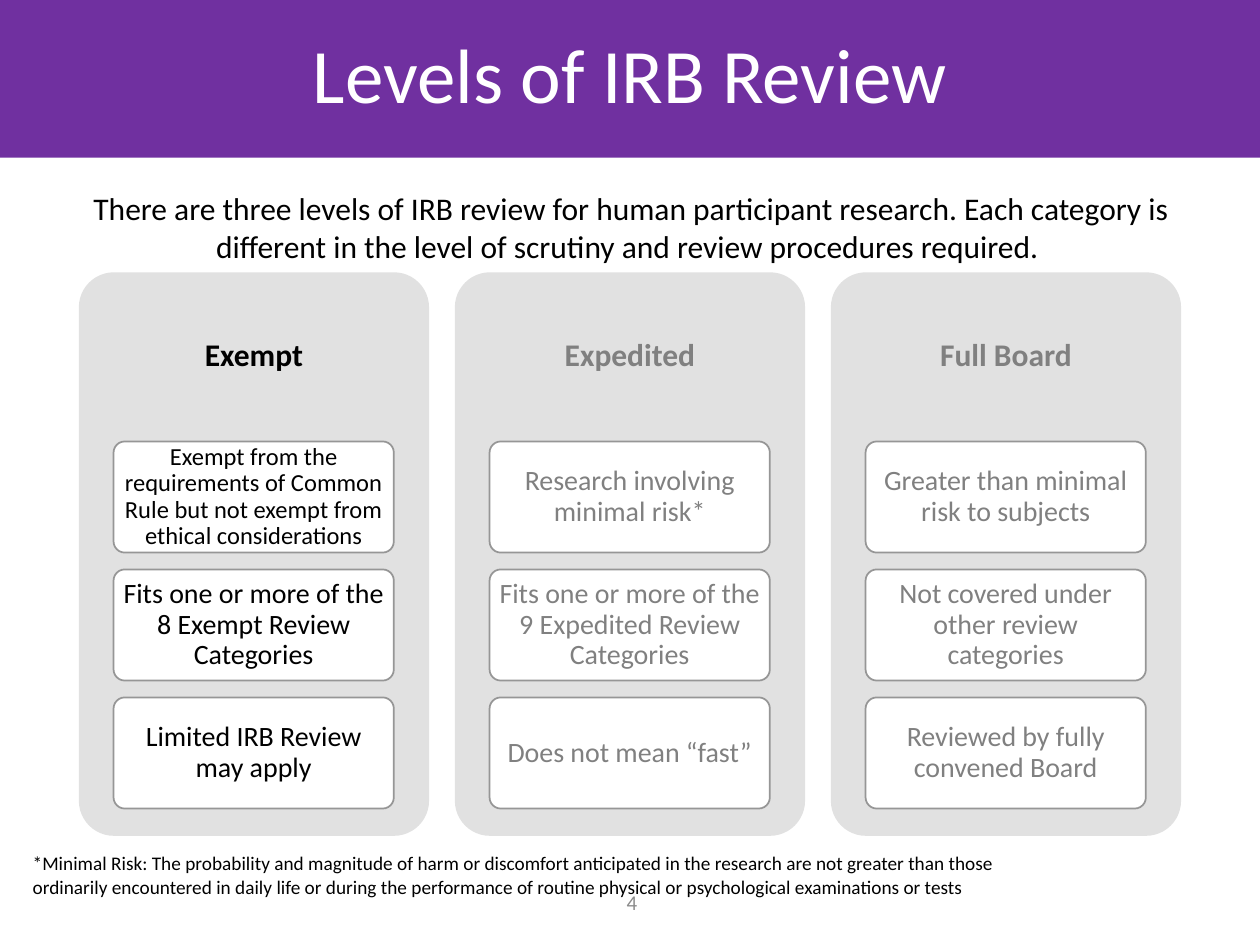
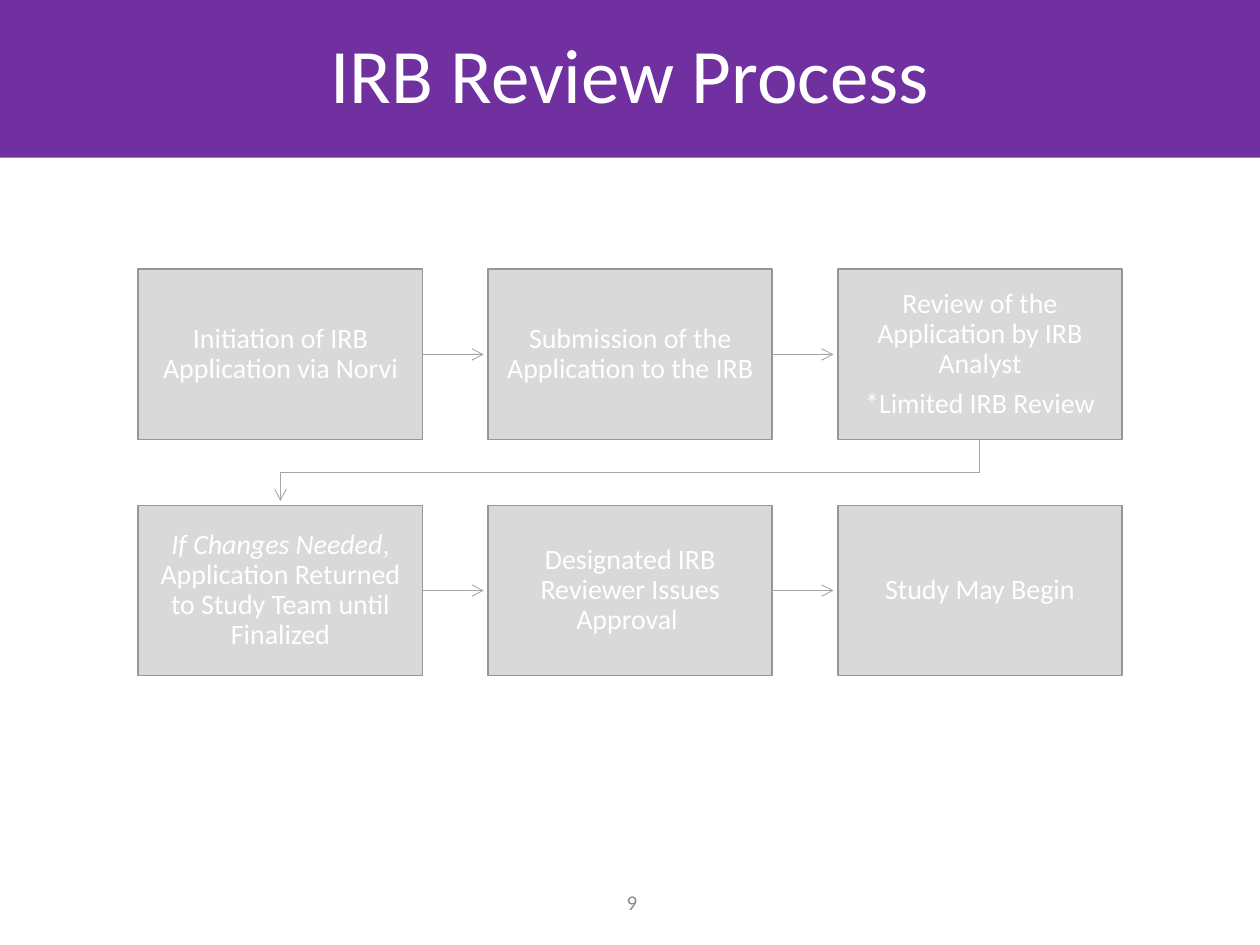
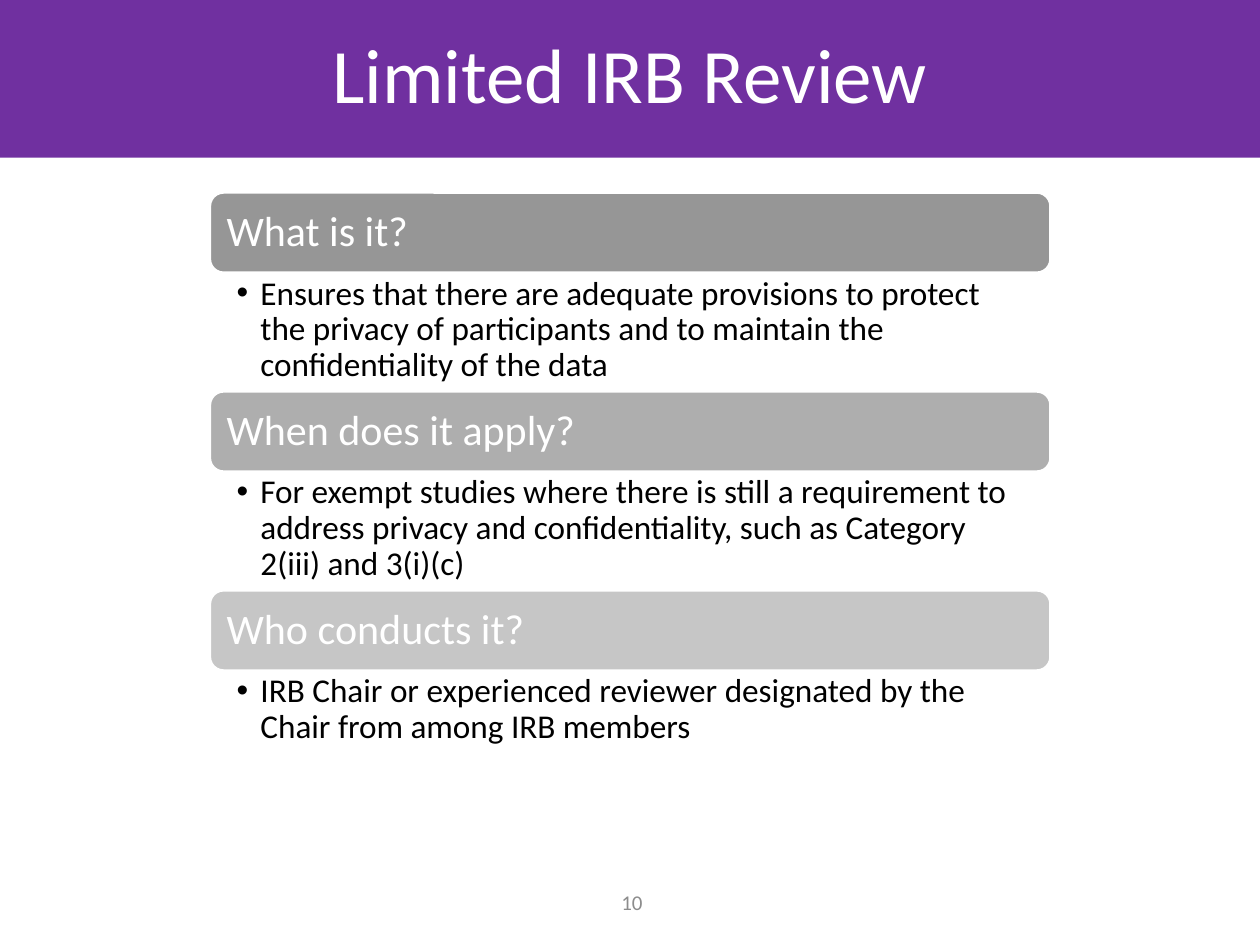
import pptx
import pptx.util
import pptx.dml.color
import pptx.enum.shapes
import pptx.enum.text
import pptx.oxml
import lxml.etree

Cm = pptx.util.Cm
Pt = pptx.util.Pt
RGB = pptx.dml.color.RGBColor.from_string
SHAPE = pptx.enum.shapes.MSO_SHAPE
ALIGN = pptx.enum.text.PP_ALIGN
ANCHOR = pptx.enum.text.MSO_ANCHOR
qn = pptx.oxml.ns.qn


class Theme:
    font = "Calibri"
    purple, white, black = RGB("7030A0"), RGB("FFFFFF"), RGB("000000")
    muted, number = RGB("808080"), RGB("8C8C8C")
    panel, step = RGB("E1E1E1"), RGB("D9D9D9")
    border, arrow = RGB("969696"), RGB("A5A5A5")
    bars = [RGB("969696"), RGB("AEAEAE"), RGB("C6C6C6")]
    title_size, bar_size, list_size, head_size = 44, 24, 19, 18
    box_size, small_size, number_size, note_size = 16, 14, 12, 11


def style_text(tf, size, color, align=ALIGN.CENTER, anchor=ANCHOR.MIDDLE, bold=False,
               spacing=0.9, after=0.35, insets=(0.25, 0.13, 0.25, 0.13)):
    """Format a whole text frame; after is a share of the type size."""
    tf.word_wrap = True
    tf.auto_size = pptx.enum.text.MSO_AUTO_SIZE.NONE
    tf.vertical_anchor = anchor
    tf.margin_left, tf.margin_top, tf.margin_right, tf.margin_bottom = map(Cm, insets)
    for p in tf.paragraphs:
        p.alignment = align
        p.line_spacing = spacing
        p.space_before = Pt(0)
        p.space_after = Pt(round(size * after, 1))
        for r in p.runs:
            r.font.name = Theme.font
            r.font.size = Pt(size)
            r.font.bold = bold
            r.font.color.rgb = color


def add_box(s, kind, left, top, width, height, fill, line=None):
    """Add a flat filled shape, with a thin border if a line colour is given."""
    sp = s.shapes.add_shape(kind, Cm(left), Cm(top), Cm(width), Cm(height))
    sp.shadow.inherit = False
    sp.fill.solid()
    sp.fill.fore_color.rgb = fill
    if line is None:
        sp.line.fill.background()
    else:
        sp.line.color.rgb = line
        sp.line.width = Pt(1)
    return sp


prs = pptx.Presentation()
prs.slide_width, prs.slide_height = Cm(25.4), Cm(19.05)

# Slides with title band and page number
TITLE_ONLY, COMPARISON = 5, 4
for title, number, layout in [("Levels of IRB Review", "4", TITLE_ONLY),
                              ("IRB Review Process", "9", TITLE_ONLY),
                              ("Limited IRB Review", "10", COMPARISON)]:
    s = prs.slides.add_slide(prs.slide_layouts[layout])
    sp = s.shapes.title
    sp.left, sp.top, sp.width, sp.height = Cm(0), Cm(0), prs.slide_width, Cm(3.18)
    sp.fill.solid()
    sp.fill.fore_color.rgb = Theme.purple
    sp.text_frame.text = title
    style_text(sp.text_frame, Theme.title_size, Theme.white, after=0)
    tf = s.shapes.add_textbox(Cm(11.89), Cm(17.68), Cm(1.7), Cm(1.02)).text_frame
    tf.text = number
    style_text(tf, Theme.number_size, Theme.number, spacing=1, after=0)
levels, process, limited = prs.slides

# Levels: introduction and footnote
for text, place, size, align in [
    ("There are three levels of IRB review for human participant research. Each category is "
     "different in the level of scrutiny and review procedures required. ",
     (0.89, 3.68, 23.67, 1.8), Theme.head_size, ALIGN.CENTER),
    ("*Minimal Risk: The probability and magnitude of harm or discomfort anticipated in the "
     "research are not greater than those ordinarily encountered in daily life or during the "
     "performance of routine physical or psychological examinations or tests",
     (0.41, 17.04, 20.12, 1.2), Theme.note_size, ALIGN.LEFT),
]:
    tf = levels.shapes.add_textbox(*map(Cm, place)).text_frame
    tf.text = text
    style_text(tf, size, Theme.black, align, ANCHOR.TOP, spacing=1, after=0)

# Levels: three columns of cards
columns = [
    ("Exempt", Theme.black,
     ["Exempt from the requirements of Common Rule but not exempt from ethical considerations",
      "Fits one or more of the 8 Exempt Review Categories",
      "Limited IRB Review may apply"]),
    ("Expedited", Theme.muted,
     ["Research involving minimal risk*",
      "Fits one or more of the 9 Expedited Review Categories",
      "Does not mean “fast”"]),
    ("Full Board", Theme.muted,
     ["Greater than minimal risk to subjects",
      "Not covered under other review categories",
      "Reviewed by fully convened Board"]),
]
for i, (heading, color, cards) in enumerate(columns):
    left = 1.59 + i * 7.58
    sp = add_box(levels, SHAPE.ROUNDED_RECTANGLE, left, 5.49, 7.06, 11.36, Theme.panel)
    sp.adjustments[0] = 0.1
    tf = levels.shapes.add_textbox(Cm(left), Cm(5.49), Cm(7.06), Cm(3.4)).text_frame
    tf.text = heading
    style_text(tf, Theme.head_size, color, bold=True, insets=(0.18,) * 4)
    for j, card in enumerate(cards):
        sp = add_box(levels, SHAPE.ROUNDED_RECTANGLE, left + 0.7, 8.9 + j * 2.58, 5.65, 2.24,
                     Theme.white, Theme.border)
        sp.adjustments[0] = 0.1
        sp.text_frame.text = card
        size = Theme.small_size if len(card) > 60 else Theme.box_size
        style_text(sp.text_frame, size, color, insets=(0.09, 0.07, 0.09, 0.07))

# Process: grid of steps
steps = [
    "Initiation of IRB Application via Norvi",
    "Submission of the Application to the IRB",
    "Review of the Application by IRB Analyst\n*Limited IRB Review",
    "If Changes Needed, Application Returned to Study Team until Finalized",
    "Designated IRB Reviewer Issues Approval ",
    "Study May Begin",
]
lead = "If Changes Needed"
grid_left, grid_top, step_w, step_h, pitch_x, pitch_y = 2.79, 5.43, 5.73, 3.43, 7.05, 4.76
arrow_gap = 0.09
arrows = []
for i, step in enumerate(steps):
    row, col = divmod(i, 3)
    left, top = grid_left + col * pitch_x, grid_top + row * pitch_y
    sp = add_box(process, SHAPE.RECTANGLE, left, top, step_w, step_h, Theme.step, Theme.border)
    tf = sp.text_frame
    tf.text = step
    p = tf.paragraphs[0]
    if step.startswith(lead):
        p.text = lead
        p.add_run().text = step[len(lead):]
    style_text(tf, Theme.box_size, Theme.white, insets=(0.3,) * 4)
    p.runs[0].font.italic = step.startswith(lead)
    if col < 2:
        y = Cm(top + step_h / 2)
        arrows.append(process.shapes.add_connector(
            pptx.enum.shapes.MSO_CONNECTOR.STRAIGHT,
            Cm(left + step_w), y, Cm(left + pitch_x - arrow_gap), y))

# Process: bent arrow from the first row to the second
first_x = grid_left + step_w / 2
last_x = first_x + 2 * pitch_x
row_bottom, next_top = grid_top + step_h, grid_top + pitch_y
turn_y = (row_bottom + next_top) / 2
builder = process.shapes.build_freeform(Cm(last_x), Cm(row_bottom))
builder.add_line_segments([(Cm(last_x), Cm(turn_y)), (Cm(first_x), Cm(turn_y)),
                           (Cm(first_x), Cm(next_top - arrow_gap))], close=False)
sp = builder.convert_to_shape()
sp.fill.background()
arrows.append(sp)

for sp in arrows:
    sp.line.color.rgb = Theme.arrow
    sp.line.width = Pt(0.5)
    lxml.etree.SubElement(sp.line._get_or_add_ln(), qn("a:tailEnd"), type="arrow")
    lxml.etree.SubElement(sp._element.spPr, qn("a:effectLst"))

# Limited review: question bars with answers
questions = [
    ("What is it?",
     "Ensures that there are adequate provisions to protect the privacy of participants and to "
     "maintain the confidentiality of the data"),
    ("When does it apply?",
     "For exempt studies where there is still a requirement to address privacy and "
     "confidentiality, such as Category 2(iii) and 3(i)(c)"),
    ("Who conducts it?",
     "IRB Chair or experienced reviewer designated by the Chair from among IRB members"),
]
bodies = [sp for sp in limited.placeholders if sp.placeholder_format.idx > 0]
for i, (question, answer) in enumerate(questions):
    top = 3.89 + i * 4.01
    bar = add_box(limited, SHAPE.ROUNDED_RECTANGLE, 4.24, top, 16.93, 1.6,
                  Theme.bars[i], Theme.white)
    bar.text_frame.text = question
    style_text(bar.text_frame, Theme.bar_size, Theme.white, ALIGN.LEFT, insets=(0.25,) * 4)

    body = bodies[i]
    body.left, body.top, body.width, body.height = map(Cm, (4.24, top + 1.6, 16.93, 2.41))
    tf = body.text_frame
    tf.text = answer
    pPr = tf.paragraphs[0]._p.get_or_add_pPr()
    pPr.set("marL", str(Cm(0.48)))
    pPr.set("indent", str(-Cm(0.48)))
    lxml.etree.SubElement(pPr, qn("a:buChar"), char="•")
    style_text(tf, Theme.list_size, Theme.black, ALIGN.LEFT, ANCHOR.TOP, after=0.2,
               insets=(0.53, 0.08, 0.48, 0.08))
for body in bodies[len(questions):]:
    body._element.getparent().remove(body._element)

prs.save("out.pptx")
